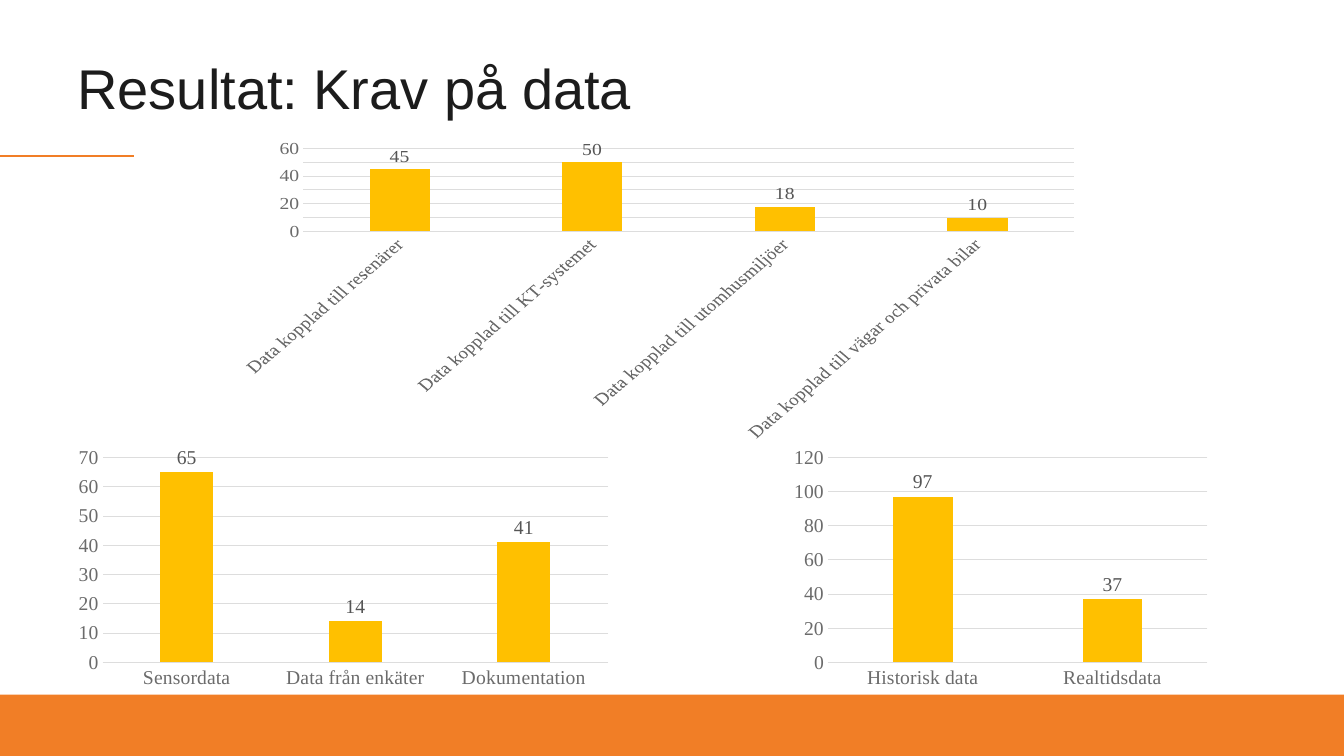
from dataclasses import dataclass

from lxml import etree
from pptx import Presentation
from pptx.chart.data import CategoryChartData
from pptx.dml.color import RGBColor
from pptx.enum.chart import XL_CHART_TYPE, XL_LABEL_POSITION, XL_TICK_MARK
from pptx.enum.shapes import MSO_CONNECTOR, MSO_SHAPE
from pptx.enum.text import MSO_ANCHOR
from pptx.oxml.ns import qn
from pptx.util import Inches, Pt

COLUMN = XL_CHART_TYPE.COLUMN_CLUSTERED
OUTSIDE = XL_LABEL_POSITION.OUTSIDE_END
NO_TICK = XL_TICK_MARK.NONE
STRAIGHT = MSO_CONNECTOR.STRAIGHT
RECT = MSO_SHAPE.RECTANGLE
MIDDLE = MSO_ANCHOR.MIDDLE


@dataclass(frozen=True)
class Theme:
    paper: str = "FFFFFF"
    accent: str = "F17E26"
    bar: str = "FFC000"
    ink: str = "1C1C1C"
    axis: str = "6B6B6B"
    label: str = "555555"
    grid: str = "DDDDDD"
    head_font: str = "Arial"
    chart_font: str = "Times New Roman"
    head_size: int = 40
    chart_size: int = 14
    rule: float = 1.5
    hair: float = 0.75


def color(code):
    return RGBColor.from_string(code)


def assign(target, values):
    """Set each attribute of target from a dict."""
    for name, value in values.items():
        setattr(target, name, value)


class Deck:
    def __init__(self, theme, width, height):
        self.theme = theme
        self.file = Presentation()
        assign(self.file, {"slide_width": Inches(width),
                           "slide_height": Inches(height)})
        self.slide = self.file.slides.add_slide(self.file.slide_layouts[6])
        self.shapes = self.slide.shapes

    def font(self, font, name, size, code):
        assign(font, {"name": name, "size": Pt(size)})
        font.color.rgb = color(code)

    def small(self, font, code):
        self.font(font, self.theme.chart_font, self.theme.chart_size, code)

    def line(self, line, code, width):
        line.color.rgb = color(code)
        line.width = Pt(width)

    def band(self, *box):
        shape = self.shapes.add_shape(RECT, *map(Inches, box))
        shape.shadow.inherit = False
        shape.fill.solid()
        shape.fill.fore_color.rgb = color(self.theme.accent)
        shape.line.fill.background()

    def rule(self, *ends):
        rule = self.shapes.add_connector(STRAIGHT, *map(Inches, ends))
        self.line(rule.line, self.theme.accent, self.theme.rule)
        props = rule._element.find(qn("p:spPr"))
        etree.SubElement(props, qn("a:effectLst"))

    def title(self, text, *box):
        frame = self.shapes.add_textbox(*map(Inches, box)).text_frame
        assign(frame, {"word_wrap": True, "vertical_anchor": MIDDLE})
        para = frame.paragraphs[0]
        assign(para, {"text": text, "line_spacing": 0.8})
        self.font(para.runs[0].font, self.theme.head_font,
                  self.theme.head_size, self.theme.ink)

    def back(self, chart):
        """Fill the chart area with the paper colour, without an outline."""
        props = etree.Element(qn("c:spPr"))
        fill = etree.SubElement(props, qn("a:solidFill"))
        etree.SubElement(fill, qn("a:srgbClr"), val=self.theme.paper)
        line = etree.SubElement(props, qn("a:ln"))
        etree.SubElement(line, qn("a:noFill"))
        chart._chartSpace.find(qn("c:chart")).addnext(props)

    def chart(self, box, values, top, step, turn=None):
        """Draw a column chart; turn is the category label angle in degrees."""
        theme = self.theme
        data = CategoryChartData()
        data.categories = list(values)
        data.add_series("Series 1", list(values.values()))
        chart = self.shapes.add_chart(COLUMN, *map(Inches, box), data).chart
        assign(chart, {"has_legend": False, "has_title": False})
        self.small(chart.font, theme.ink)
        self.back(chart)

        for axis in (chart.category_axis, chart.value_axis):
            assign(axis, {"major_tick_mark": NO_TICK,
                          "minor_tick_mark": NO_TICK})
            self.small(axis.tick_labels.font, theme.axis)
        cats, vals = chart.category_axis, chart.value_axis
        self.line(cats.format.line, theme.grid, theme.hair)
        assign(vals, {"minimum_scale": 0, "maximum_scale": top,
                      "major_unit": step, "has_major_gridlines": True})
        vals.format.line.fill.background()
        self.line(vals.major_gridlines.format.line, theme.grid, theme.hair)
        if turn is not None:
            body = cats._element.find(qn("c:txPr")).find(qn("a:bodyPr"))
            body.set("rot", str(turn * 60000))
            body.set("vert", "horz")

        plot = chart.plots[0]
        assign(plot, {"gap_width": 219, "overlap": -27,
                      "vary_by_categories": False, "has_data_labels": True})
        assign(plot.data_labels, {"show_value": True, "position": OUTSIDE})
        self.small(plot.data_labels.font, theme.label)
        fill = plot.series[0].format.fill
        fill.solid()
        fill.fore_color.rgb = color(theme.bar)


def main():
    deck = Deck(Theme(), 13.33, 7.5)
    deck.band(0, 6.89, 13.33, 0.61)
    deck.rule(0, 1.55, 1.33, 1.55)
    deck.title("Resultat: Krav på data", 0.67, 0.3, 12, 1.25)

    topics = {
        "Data kopplad till resenärer": 45,
        "Data kopplad till KT-systemet": 50,
        "Data kopplad till utomhusmiljöer": 18,
        "Data kopplad till vägar och privata bilar": 10,
    }
    times = {"Historisk data": 97, "Realtidsdata": 37}
    sources = {"Sensordata": 65, "Data från enkäter": 14, "Dokumentation": 41}
    row, tall = 4.38, 2.5
    deck.chart((2.22, 1.38, 8.6, 3), topics, 60, 10, turn=-45)
    deck.chart((7.79, row, 4.27, tall), times, 120, 20)
    deck.chart((0.67, row, 5.47, tall), sources, 70, 10)
    deck.file.save("out.pptx")


if __name__ == "__main__":
    main()
